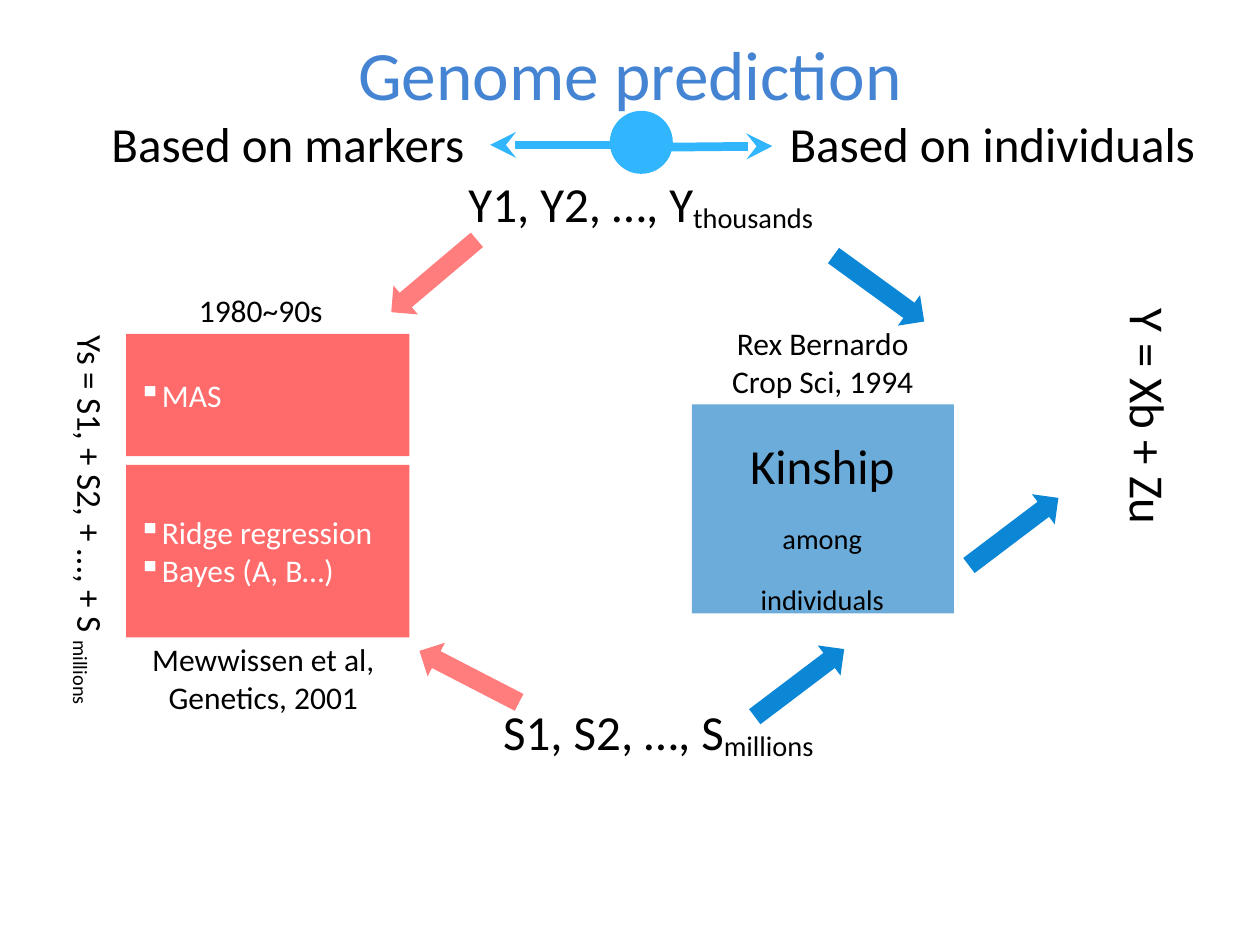
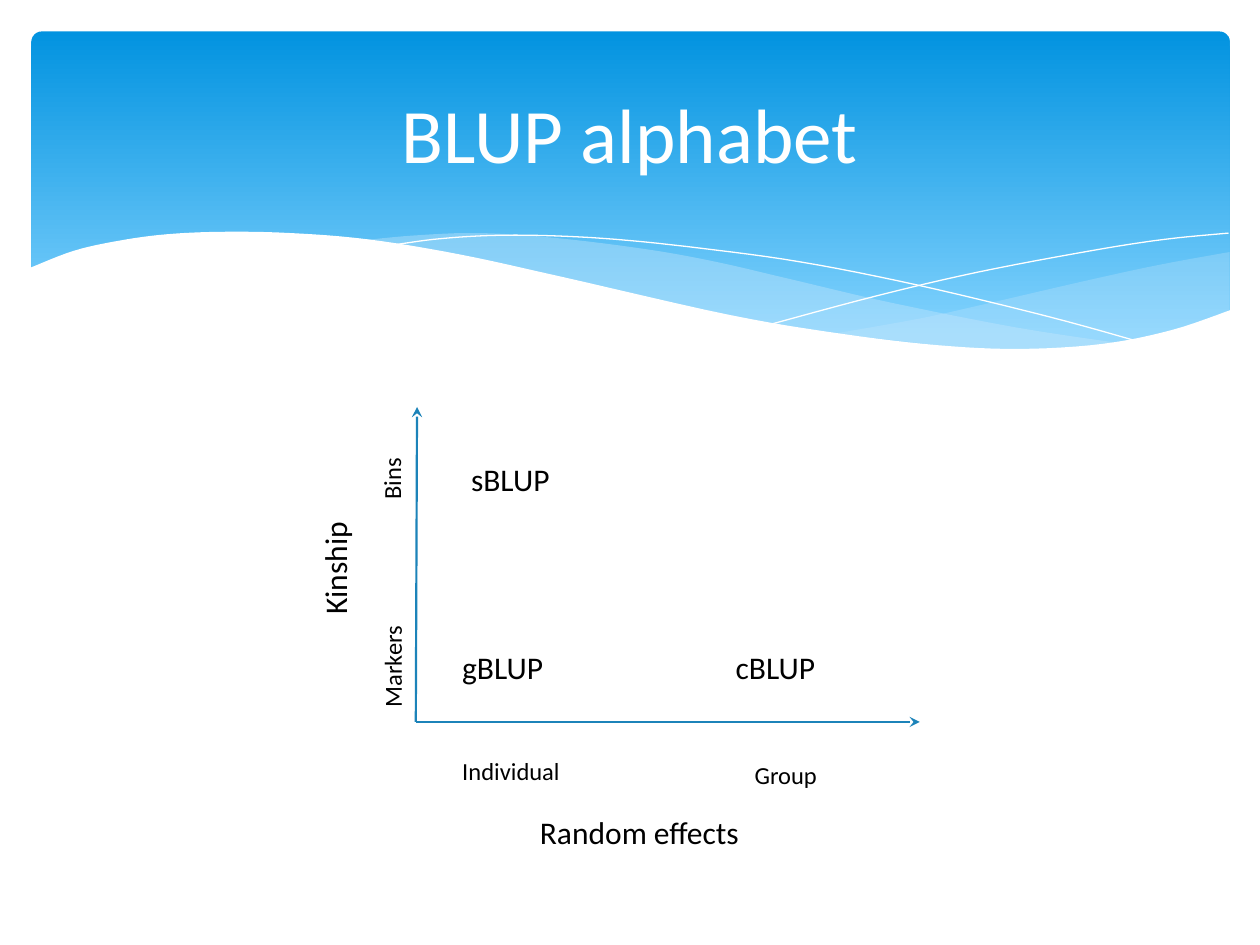
from dataclasses import dataclass

from lxml import etree
from pptx import Presentation
from pptx import util as u
from pptx.dml.color import RGBColor
from pptx.enum import shapes, text
from pptx.oxml.ns import qn

COLS, ROWS = 100, 75  # grid over the slide
WIDTH, HEIGHT = u.Inches(10), u.Inches(7.5)
TITLE_ONLY = 5


@dataclass(frozen=True)
class Theme:
    font: str = "Calibri"
    ink: str = "000000"
    paper: str = "FFFFFF"
    title: str = "4584D3"
    sky: str = "31B6FD"
    axis: str = "1C83B9"
    red: str = "FF0000"
    red_arrow: str = "FF5050"
    blue: str = "0070C0"
    blue_arrow: str = "0B87D6"
    band_top: str = "0293E0"
    band_bottom: str = "83D3FE"
    mist: str = "C6E7FC"
    large: float = 28
    medium: float = 20
    body: float = 18
    small: float = 14


T = Theme()
LEFT, CENTER = text.PP_ALIGN.LEFT, text.PP_ALIGN.CENTER
SHAPE = shapes.MSO_SHAPE


def x(col):
    return round(col * WIDTH / COLS)


def y(row):
    return round(row * HEIGHT / ROWS)


def place(box):
    left, top, width, height = box
    return x(left), y(top), x(width), y(height)


# Formatting
def paint(sp, color, opacity=100):
    sp.shadow.inherit = False
    sp.line.fill.background()
    sp.fill.solid()
    sp.fill.fore_color.rgb = RGBColor.from_string(color)
    if opacity < 100:
        clr = sp.element.spPr.find(f"{qn('a:solidFill')}/{qn('a:srgbClr')}")
        etree.SubElement(clr, qn("a:alpha"), val=str(opacity * 1000))


def style(p, size, color=T.ink, align=CENTER):
    p.alignment = align
    p.font.name = T.font
    p.font.size = u.Pt(size)
    p.font.color.rgb = RGBColor.from_string(color)


def write(tf, lines, size, color=T.ink, align=CENTER, bullet=None):
    """One paragraph a line; the part after "|" is lowered."""
    tf.word_wrap = True
    for i, line in enumerate(lines):
        p = tf.paragraphs[0] if i == 0 else tf.add_paragraph()
        style(p, size, color, align)
        base, _, lowered = line.partition("|")
        if base:
            p.add_run().text = base
        if lowered:
            r = p.add_run()
            r.text = lowered
            r.font._element.set("baseline", "-12000")
        if bullet:
            etree.SubElement(p._p.get_or_add_pPr(), qn("a:buChar"), char=bullet)


# Kinds of element
def add_titled_slide(prs, title, box, size, color):
    slide = prs.slides.add_slide(prs.slide_layouts[TITLE_ONLY])
    sp = slide.shapes.title
    sp.left, sp.top, sp.width, sp.height = place(box)
    sp.text_frame.vertical_anchor = text.MSO_ANCHOR.MIDDLE
    write(sp.text_frame, [title], size, color)
    return slide


def add_label(slide, box, lines, size, align=CENTER, rotation=0):
    sp = slide.shapes.add_textbox(*place(box))
    sp.rotation = rotation
    write(sp.text_frame, lines, size, align=align)
    sp.text_frame.auto_size = text.MSO_AUTO_SIZE.SHAPE_TO_FIT_TEXT


def add_block(slide, kind, box, color, opacity=100, rotation=0):
    sp = slide.shapes.add_shape(kind, *place(box))
    sp.rotation = rotation
    paint(sp, color, opacity)
    return sp


def add_method_box(slide, box, methods):
    tf = add_block(slide, SHAPE.RECTANGLE, box, T.red, 58).text_frame
    tf.vertical_anchor = text.MSO_ANCHOR.MIDDLE
    write(tf, methods, T.body, T.paper, LEFT, bullet="▪")


def add_arrow(slide, start, end, color, width, ends=("tailEnd",)):
    line = slide.shapes.add_connector(
        shapes.MSO_CONNECTOR.STRAIGHT, x(start[0]), y(start[1]), x(end[0]), y(end[1]))
    line.line.color.rgb = RGBColor.from_string(color)
    line.line.width = u.Pt(width)
    ln = line.line._get_or_add_ln()
    for end_name in ends:
        etree.SubElement(ln, qn(f"a:{end_name}"), type="stealth")
    etree.SubElement(line.element.spPr, qn("a:effectLst"))


def curve(points, steps=6):
    """Points of a Catmull-Rom spline through the given points."""
    padded = [points[0], *points, points[-1]]
    result = []
    for a, b, c, d in zip(padded, padded[1:], padded[2:], padded[3:]):
        for t in (i / steps for i in range(steps)):
            result.append(tuple(
                0.5 * (2 * q + (r - p) * t + (2 * p - 5 * q + 4 * r - s) * t ** 2
                       + (3 * q - p - 3 * r + s) * t ** 3)
                for p, q, r, s in zip(a, b, c, d)))
    return result + [points[-1]]


def add_outline(slide, points, close=True):
    first, *rest = [(x(col), y(row)) for col, row in points]
    builder = slide.shapes.build_freeform(*first)
    builder.add_line_segments(rest, close=close)
    sp = builder.convert_to_shape()
    sp.shadow.inherit = False
    return sp


def add_wave_band(slide):
    band = add_block(slide, SHAPE.ROUNDED_RECTANGLE, (2.5, 2.5, 95.1, 27), T.band_top)
    band.adjustments[0] = 0.03
    band.fill.gradient()
    band.fill.gradient_angle = 270
    for stop, position, color in zip(band.fill.gradient_stops, (0, 0.9),
                                     (T.band_top, T.band_bottom)):
        stop.position = position
        stop.color.rgb = RGBColor.from_string(color)

    # Translucent waves
    right_top = [(97.6, 20), (92.1, 21), (86.1, 22.3), (77.9, 24.2), (72.9, 25.3),
                 (66.1, 26.5)]
    right_bottom = [(66.1, 26.5), (71.9, 27.1), (76.9, 27.7), (81.4, 27.8),
                    (86.3, 27.5), (91.3, 26.7), (97.6, 24.7)]
    middle_top = [(89.3, 27.3), (80.7, 26), (70.6, 24), (62.9, 22.2), (56.9, 20.8),
                  (51.4, 19.8), (44.2, 18.9), (38, 18.5), (32.8, 18.7), (28.6, 19.1)]
    middle_bottom = [(28.6, 19.1), (36.2, 20.3), (42.7, 21.6), (49.1, 23.2),
                     (58.4, 25.2), (66.5, 26.6), (73.6, 27.5), (79.6, 27.8),
                     (85.7, 27.7), (89.3, 27.3)]
    for top, bottom, opacity in ((right_top, right_bottom, 29),
                                 (middle_top, middle_bottom, 40)):
        paint(add_outline(slide, curve(top) + curve(bottom)), T.mist, opacity)

    # Hairlines
    falling = [(30.9, 19.5), (34.4, 19), (38.7, 18.7), (43.3, 18.7), (48.9, 19),
               (55.6, 19.7), (63.6, 20.8), (72.7, 22.6), (83.1, 25.1), (90.7, 27.2)]
    rising = [(61.3, 25.7), (69.5, 23.5), (77.6, 21.6), (86.6, 19.9), (92.4, 19),
              (97.5, 18.5)]
    for points in (falling, rising):
        sp = add_outline(slide, curve(points), close=False)
        sp.fill.background()
        sp.line.color.rgb = RGBColor.from_string(T.paper)
        sp.line.width = u.Pt(0)

    # White lower edge
    edge = [(97.7, 24.6), (93, 26.2), (87.5, 27.3), (80.9, 27.7), (74.4, 27.4),
            (66.8, 26.5), (57.9, 25), (44.7, 22), (36.5, 20.2), (29.2, 19),
            (23, 18.5), (17.7, 18.4), (13.2, 18.6), (9.5, 19.1), (5.9, 19.9),
            (2.3, 21.3)]
    paint(add_outline(slide, curve(edge) + [(2.3, 32.9), (97.7, 32.9)]), T.paper)

    # Title in front of the band
    title = slide.shapes.title.element
    title.getparent().append(title)


# Slides
def build_prediction(prs):
    slide = add_titled_slide(prs, "Genome prediction", (5, 1.7, 90, 8.1), 39.6, T.title)

    # Boxes
    add_block(slide, SHAPE.RECTANGLE, (54.9, 32.1, 20.8, 16.6), T.blue, 58)
    add_method_box(slide, (10, 26.5, 22.5, 9.7), ["MAS"])
    add_method_box(slide, (10, 36.9, 22.5, 13.7), ["Ridge regression", "Bayes (A, B…)"])

    # Block arrows
    for left, top, angle, color, opacity in (
            (59, 52.7, 322.9, T.blue_arrow, 100),
            (76, 40.7, 322.9, T.blue_arrow, 100),
            (65.3, 21.4, 36, T.blue_arrow, 100),
            (30, 20.4, 139.8, T.red_arrow, 74),
            (32.8, 52.2, 207.3, T.red_arrow, 74)):
        add_block(slide, SHAPE.RIGHT_ARROW, (left, top, 8.9, 3), color, opacity, angle)

    # Formulas and captions
    for box, lines, size, rotation in (
            ((30.6, 55.2, 43.3, 5.7), ["S1, S2, …, S|millions"], T.large, 0),
            ((-17.3, 39.1, 49, 4.4), ["Ys = S1, + S2, + …, + S |millions"], T.medium, 90),
            ((30, 13.3, 41.7, 5.7), ["Y1, Y2, …, Y|thousands"], T.large, 0),
            ((56.5, 34.1, 17.5, 12), ["Kinship", "|among individuals"], T.large, 0),
            ((75.8, 30.2, 30.8, 5.7), ["Y = Xb + Zu"], T.large, 90),
            ((9.9, 50.3, 22, 7.1), ["Mewwissen et al,", "Genetics, 2001"], T.body, 0),
            ((54.3, 25.2, 22, 7.1), ["Rex Bernardo", "Crop Sci, 1994"], T.body, 0),
            ((9.7, 22.6, 22, 4), ["1980~90s"], T.body, 0),
            ((60.2, 8.5, 37.1, 5.7), ["Based on individuals"], T.large, 0),
            ((4.3, 8.5, 37.1, 5.7), ["Based on markers"], T.large, 0)):
        add_label(slide, box, lines, size, rotation=rotation)

    # Two-way pointer
    add_arrow(slide, (61.3, 11.6), (50.9, 11.7), T.sky, 5, ["headEnd"])
    add_block(slide, SHAPE.OVAL, (48.4, 8.8, 5, 5), T.sky)
    add_arrow(slide, (50.9, 11.5), (38.9, 11.5), T.sky, 5, ["headEnd", "tailEnd"])


def build_alphabet(prs):
    slide = add_titled_slide(prs, "BLUP alphabet", (5, 3.7, 90, 13.7), 44, T.paper)
    add_wave_band(slide)

    # Axes
    origin = (33, 57.3)
    for tip in ((73, 57.3), (33.1, 32.3)):
        add_arrow(slide, origin, tip, T.axis, 1.25)

    # Methods and axis labels
    for box, word, size, align, rotation in (
            ((35.7, 50.9, 9.6, 4), "gBLUP", T.body, LEFT, 0),
            ((36.4, 36, 8.9, 4), "sBLUP", T.body, LEFT, 0),
            ((57.4, 50.9, 11.9, 4), "cBLUP", T.body, LEFT, 0),
            ((27.8, 36.3, 6.6, 3.4), "Bins", T.small, CENTER, 270),
            ((25.6, 51.2, 11.1, 3.4), "Markers", T.small, CENTER, 270),
            ((35.7, 59.5, 12.9, 3.4), "Individual", T.small, LEFT, 0),
            ((58.9, 59.8, 8.9, 3.4), "Group", T.small, LEFT, 0),
            ((40.9, 64, 19.7, 4), "Random effects", T.body, CENTER, 0),
            ((20, 43.1, 13.1, 4), "Kinship", T.body, CENTER, 270)):
        add_label(slide, box, [word], size, align, rotation)


def main():
    prs = Presentation()
    prs.slide_width, prs.slide_height = WIDTH, HEIGHT
    build_prediction(prs)
    build_alphabet(prs)
    prs.save("out.pptx")


if __name__ == "__main__":
    main()
